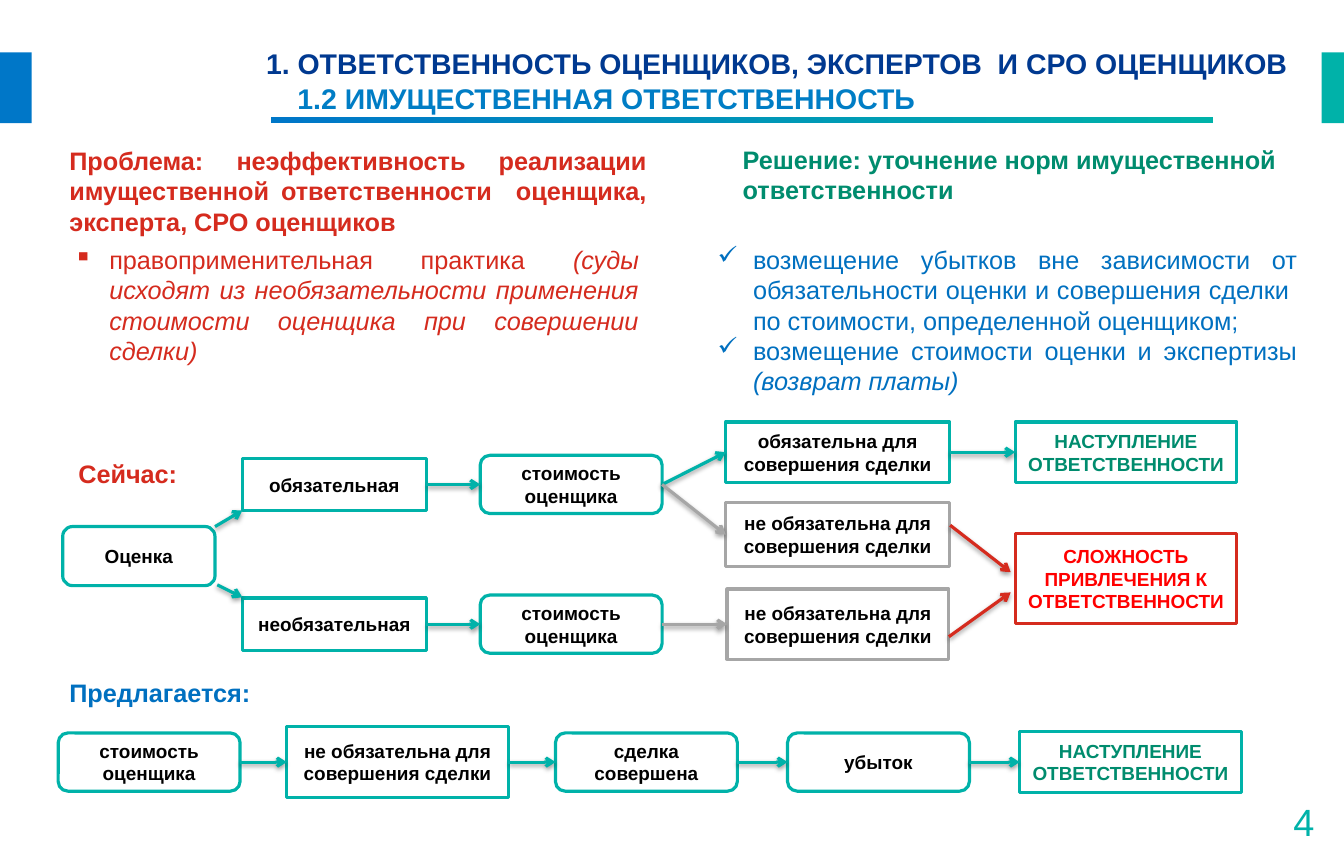
from lxml import etree
from pptx import Presentation
from pptx.dml.color import RGBColor
from pptx.enum.shapes import MSO_CONNECTOR, MSO_SHAPE
from pptx.enum.text import MSO_ANCHOR, PP_ALIGN
from pptx.oxml import parse_xml
from pptx.oxml.ns import nsdecls, qn
from pptx.util import Cm, Pt

rgb = RGBColor.from_string
TEAL, GREEN, BLUE, RED, GRAY = "00B2A9", "008C6E", "0070C0", "D52B1E", "A6A6A6"
BLACK, BRIGHT_RED = "000000", "FF0000"
RECT, ROUND = MSO_SHAPE.RECTANGLE, MSO_SHAPE.ROUNDED_RECTANGLE
LEFT, RIGHT, CENTER, JUSTIFY = PP_ALIGN.LEFT, PP_ALIGN.RIGHT, PP_ALIGN.CENTER, PP_ALIGN.JUSTIFY
SHADOW = (f'<a:effectLst {nsdecls("a")}><a:outerShdw blurRad="39370" dist="20320" dir="5400000" '
          'rotWithShape="0"><a:srgbClr val="000000"><a:alpha val="38000"/></a:srgbClr>'
          '</a:outerShdw></a:effectLst>')

presentation = Presentation()
presentation.slide_width, presentation.slide_height = Cm(30), Cm(19.05)
slide = presentation.slides.add_slide(presentation.slide_layouts[6])


def add_run(paragraph, text, size, color, bold=False, italic=False):
    run = paragraph.add_run()
    run.text = text
    font = run.font
    font.name, font.size, font.bold, font.italic = "Arial", Pt(size), bold, italic
    font.color.rgb = rgb(color)


def add_shape(kind, left, top, width, height):
    shape = slide.shapes.add_shape(kind, Cm(left), Cm(top), Cm(width), Cm(height))
    shape.shadow.inherit = False
    shape.fill.solid()
    shape.line.fill.background()
    return shape


# Side blocks and title underline
for left, width, color in [(0, 0.71, "0077C8"), (29.5, 0.5, TEAL)]:
    add_shape(RECT, left, 1.17, width, 1.58).fill.fore_color.rgb = rgb(color)
underline = add_shape(RECT, 6.05, 2.62, 21.03, 0.12)
underline.fill.gradient()
underline.fill.gradient_angle = 0
for stop, color in zip(underline.fill.gradient_stops, ("0077C8", TEAL)):
    stop.color.rgb = rgb(color)

# Title
title = slide.shapes.add_textbox(Cm(5.94), Cm(1.04), Cm(23.6), Cm(1.58)).text_frame
title.word_wrap = True
title.margin_left = title.margin_right = title.margin_top = title.margin_bottom = 0
add_run(title.paragraphs[0], "1. ОТВЕТСТВЕННОСТЬ ОЦЕНЩИКОВ, ЭКСПЕРТОВ  И СРО ОЦЕНЩИКОВ", 18, "003990", True)
subtitle = title.add_paragraph()
subtitle._p.get_or_add_pPr().set("marL", str(Cm(0.7)))
add_run(subtitle, "1.2 ИМУЩЕСТВЕННАЯ ОТВЕТСТВЕННОСТЬ", 18, "007DC5", True)

# Headings, labels and page number
for left, top, width, height, align, size, color, bold, text in [
    (1.3, 3.12, 13.39, 2.31, JUSTIFY, 16, RED, True,
     "Проблема: неэффективность реализации имущественной ответственности  оценщика, эксперта, СРО оценщиков"),
    (16.33, 3.1, 12.42, 1.63, LEFT, 16, GREEN, True,
     "Решение: уточнение норм имущественной ответственности"),
    (1.5, 10.11, 2.79, 0.94, JUSTIFY, 16, RED, True, "Сейчас:"),
    (1.3, 15.01, 5.11, 0.94, JUSTIFY, 16, BLUE, True, "Предлагается:"),
    (27.1, 17.7, 2.49, 1.02, RIGHT, 24, TEAL, False, "4"),
]:
    frame = slide.shapes.add_textbox(Cm(left), Cm(top), Cm(width), Cm(height)).text_frame
    frame.word_wrap = True
    frame.paragraphs[0].alignment = align
    add_run(frame.paragraphs[0], text, size, color, bold)

# Bulleted lists: each item has upright lines and an italic ending
for left, width, height, color, mark, items in [
    (1.4, 13.11, 3, RED, "▪", [
        (["правоприменительная практика "],
         "(суды исходят из необязательности применения стоимости оценщика при совершении сделки)")]),
    (15.77, 13.44, 3.68, BLUE, "✓", [
        (["возмещение убытков вне зависимости от обязательности оценки и совершения сделки ",
          "по стоимости, определенной оценщиком;"], ""),
        (["возмещение стоимости оценки и экспертизы "], "(возврат платы)")]),
]:
    frame = slide.shapes.add_textbox(Cm(left), Cm(5.33), Cm(width), Cm(height)).text_frame
    frame.word_wrap = True
    for index, (lines, ending) in enumerate(items):
        paragraph = frame.add_paragraph() if index else frame.paragraphs[0]
        paragraph.alignment = JUSTIFY
        properties = paragraph._p.get_or_add_pPr()
        properties.set("marL", str(Cm(0.79)))
        properties.set("indent", str(Cm(-0.79)))
        etree.SubElement(properties, qn("a:buChar")).set("char", mark)
        for number, line in enumerate(lines):
            if number:
                paragraph.add_line_break()
            add_run(paragraph, line, 16, color)
        if ending:
            add_run(paragraph, ending, 16, color, italic=True)

# Flowchart boxes: left, vertical centre, width, height
NOT_REQUIRED = ["не обязательна для совершения сделки"]
VALUE = ["стоимость оценщика"]
LIABILITY = ["НАСТУПЛЕНИЕ ОТВЕТСТВЕННОСТИ"]
boxes = {}
for name, kind, left, middle, width, height, outline, color, lines in [
    ("appraisal", ROUND, 1.4, 12.42, 3.4, 1.32, TEAL, BLACK, ["Оценка"]),
    ("mandatory", RECT, 5.41, 10.82, 4.11, 1.17, TEAL, BLACK, ["обязательная"]),
    ("optional", RECT, 5.41, 13.94, 4.11, 1.17, TEAL, BLACK, ["необязательная"]),
    ("upper value", ROUND, 10.72, 10.82, 4.06, 1.3, TEAL, BLACK, VALUE),
    ("lower value", ROUND, 10.72, 13.94, 4.06, 1.3, TEAL, BLACK, VALUE),
    ("required", RECT, 16.2, 10.1, 5, 1.35, TEAL, BLACK, ["обязательна для совершения сделки"]),
    ("upper not required", RECT, 16.2, 11.94, 5, 1.42, GRAY, BLACK, NOT_REQUIRED),
    ("lower not required", RECT, 16.23, 13.94, 4.95, 1.57, GRAY, BLACK, NOT_REQUIRED),
    ("liability", RECT, 22.66, 10.1, 4.95, 1.35, TEAL, GREEN, LIABILITY),
    ("difficulty", RECT, 22.66, 12.92, 4.95, 2.01, RED, BRIGHT_RED,
     ["СЛОЖНОСТЬ", "ПРИВЛЕЧЕНИЯ К", "ОТВЕТСТВЕННОСТИ"]),
    ("proposed value", ROUND, 1.3, 17.02, 4.06, 1.3, TEAL, BLACK, VALUE),
    ("proposed not required", RECT, 6.4, 17.02, 4.95, 1.57, TEAL, BLACK, NOT_REQUIRED),
    ("deal", ROUND, 12.4, 17.02, 4.06, 1.3, TEAL, BLACK, ["сделка совершена"]),
    ("loss", ROUND, 17.58, 17.02, 4.06, 1.3, TEAL, BLACK, ["убыток"]),
    ("proposed liability", RECT, 22.76, 17.02, 4.95, 1.35, TEAL, GREEN, LIABILITY),
]:
    box = boxes[name] = add_shape(kind, left, middle - height / 2, width, height)
    box.fill.fore_color.rgb = rgb("FFFFFF")
    box.line.color.rgb = rgb(outline)
    box.line.width = Pt(2)
    frame = box.text_frame
    frame.word_wrap = True
    frame.vertical_anchor = MSO_ANCHOR.MIDDLE
    for index, line in enumerate(lines):
        paragraph = frame.add_paragraph() if index else frame.paragraphs[0]
        paragraph.alignment = CENTER
        add_run(paragraph, line, 12, color, True)

# Arrows: an end is a box name (right side to left side) or a point
for start, end, color in [
    ((4.8, 11.76), (5.41, 11.4), TEAL),
    ((4.85, 13.06), (5.41, 13.34), TEAL),
    ("mandatory", "upper value", TEAL),
    ("optional", "lower value", TEAL),
    ("upper value", "required", TEAL),
    ("upper value", "upper not required", GRAY),
    ("lower value", "lower not required", GRAY),
    ("required", "liability", TEAL),
    ((21.21, 11.73), (22.56, 12.78), RED),
    ((21.18, 14.22), (22.56, 13.23), RED),
    ("proposed value", "proposed not required", TEAL),
    ("proposed not required", "deal", TEAL),
    ("deal", "loss", TEAL),
    ("loss", "proposed liability", TEAL),
]:
    joined = start in boxes
    points = (0, 0, 0, 0) if joined else start + end
    arrow = slide.shapes.add_connector(MSO_CONNECTOR.STRAIGHT, *map(Cm, points))
    if joined:
        arrow.begin_connect(boxes[start], 3)
        arrow.end_connect(boxes[end], 1)
    arrow.line.color.rgb = rgb(color)
    arrow.line.width = Pt(2)
    etree.SubElement(arrow.line._get_or_add_ln(), qn("a:tailEnd")).set("type", "arrow")
    arrow._element.spPr.append(parse_xml(SHADOW))

presentation.save("out.pptx")
